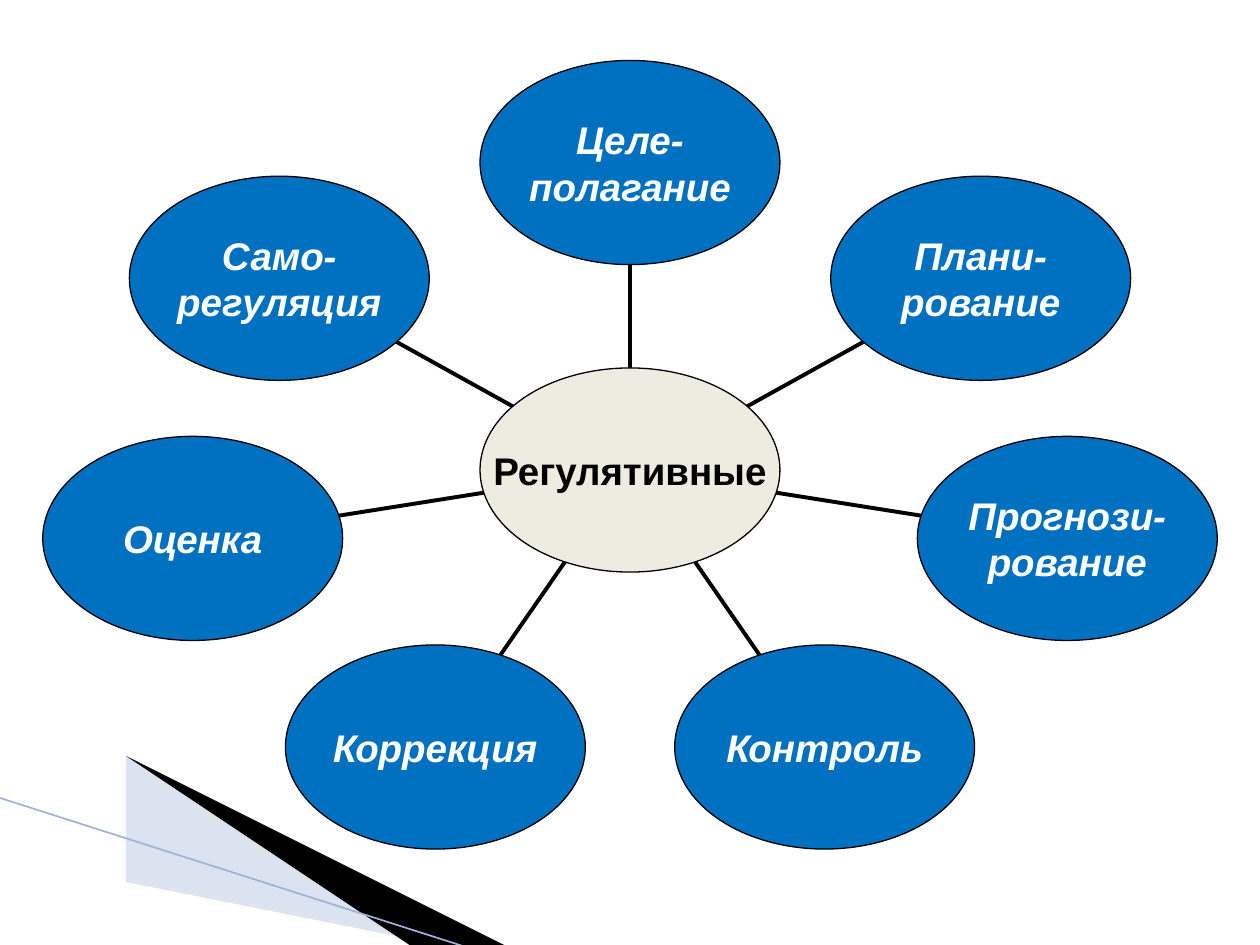
from math import cos, pi, sin

from lxml import etree
from pptx import Presentation
from pptx.dml.color import RGBColor
from pptx.enum import shapes, text
from pptx.oxml.ns import qn
from pptx.util import Inches, Pt

COLORS = {
    "petal": "0070C0",
    "hub": "EEECE1",
    "ink": "000000",
    "white": "FFFFFF",
    "pale": "A7B9DB",
    "edge": "9EB3D6",
}
CENTER_X, CENTER_Y = 5, 3.73
RING_X, RING_Y = 3.56, 2.44
OVAL_W, OVAL_H = 2.38, 1.62
HUB = ["Регулятивные"]
# Clockwise from the top
PETALS = [
    ["Целе-", "полагание"],
    ["Плани-", "рование"],
    ["Прогнози-", "рование"],
    ["Контроль"],
    ["Коррекция"],
    ["Оценка"],
    ["Само-", "регуляция"],
]


def color(name):
    return RGBColor.from_string(COLORS[name])


def add_wedge(slide, points, fill, opacity=None):
    builder = slide.shapes.build_freeform(*points[0], scale=Inches(1))
    builder.add_line_segments(points[1:], close=True)
    wedge = builder.convert_to_shape()
    wedge.shadow.inherit = False
    wedge.fill.solid()
    wedge.fill.fore_color.rgb = color(fill)
    wedge.line.fill.background()
    if opacity is not None:
        tone = wedge._element.spPr.find(".//" + qn("a:srgbClr"))
        etree.SubElement(tone, qn("a:alpha"), val=str(opacity * 1000))


def add_line(slide, start, end, name, width):
    ends = [Inches(value) for value in (*start, *end)]
    line = slide.shapes.add_connector(shapes.MSO_CONNECTOR.STRAIGHT, *ends)
    line.line.color.rgb = color(name)
    line.line.width = Pt(width)
    etree.SubElement(line._element.spPr, qn("a:effectLst"))


def add_oval(slide, x, y, lines, fill, font_color, italic):
    oval = slide.shapes.add_shape(
        shapes.MSO_SHAPE.OVAL,
        Inches(x - OVAL_W / 2), Inches(y - OVAL_H / 2),
        Inches(OVAL_W), Inches(OVAL_H))
    oval.shadow.inherit = False
    oval.fill.solid()
    oval.fill.fore_color.rgb = color(fill)
    oval.line.color.rgb = color("ink")
    oval.line.width = Pt(0.75)

    frame = oval.text_frame
    frame.word_wrap = False
    frame.vertical_anchor = text.MSO_ANCHOR.MIDDLE
    frame.margin_left = frame.margin_right = 0
    frame.margin_top = frame.margin_bottom = 0
    for index, words in enumerate(lines):
        para = frame.add_paragraph() if index else frame.paragraphs[0]
        para.alignment = text.PP_ALIGN.CENTER
        span = para.add_run()
        span.text = words
        span.font.name = "Arial"
        span.font.size = Pt(22)
        span.font.bold = True
        span.font.italic = italic
        span.font.color.rgb = color(font_color)


def add_corner(slide):
    add_wedge(slide, [(0.55, 6.51), (5.95, 7.51), (4.56, 7.51), (0.55, 6.5)],
              "pale", opacity=40)
    add_wedge(slide, [(0.53, 6.49), (4.57, 7.51), (3.72, 7.52), (0.54, 6.5)],
              "ink")
    add_line(slide, (-0.01, 6.33), (3.71, 7.52), "edge", 0.95)


def add_ring(slide):
    for index, lines in enumerate(PETALS):
        angle = 2 * pi * index / len(PETALS)
        across, up = sin(angle), cos(angle)
        x, y = CENTER_X + RING_X * across, CENTER_Y - RING_Y * up
        # Each spoke runs from the hub's rim to the petal's rim
        rim_x, rim_y = OVAL_W / 2 * across, OVAL_H / 2 * up
        add_line(slide, (CENTER_X + rim_x, CENTER_Y - rim_y),
                 (x - rim_x, y + rim_y), "ink", 2.25)
        add_oval(slide, x, y, lines, "petal", "white", italic=True)
    add_oval(slide, CENTER_X, CENTER_Y, HUB, "hub", "ink", italic=False)


def main():
    deck = Presentation()
    deck.slide_width, deck.slide_height = Inches(10), Inches(7.5)
    slide = deck.slides.add_slide(deck.slide_layouts[6])
    add_corner(slide)
    add_ring(slide)
    deck.save("out.pptx")


if __name__ == "__main__":
    main()
